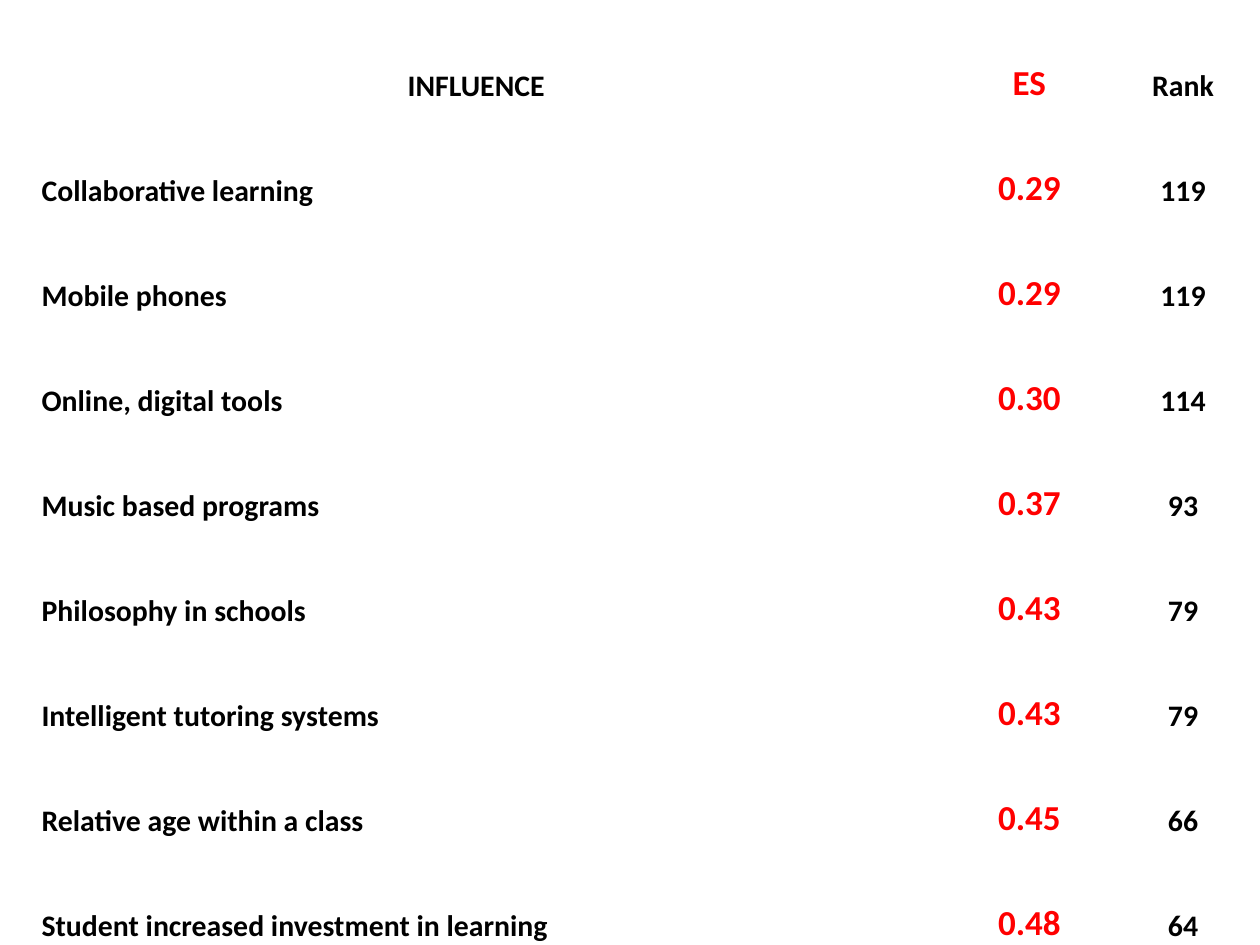
"""Build a slide with a table of learning influences, effect sizes and ranks."""
from dataclasses import dataclass

from lxml.etree import SubElement
from pptx import Presentation
from pptx.dml.color import RGBColor
from pptx.enum.text import MSO_ANCHOR, PP_ALIGN
from pptx.oxml.ns import qn
from pptx.util import Inches, Pt


@dataclass(frozen=True)
class Theme:
    font: str = "Calibri"
    ink: str = "000000"
    accent: str = "FF0000"
    paper: str = "FFFFFF"
    body: int = 17
    score: int = 20
    line: int = 1


theme = Theme()
rows = [
    ("INFLUENCE", "ES", "Rank"),
    ("Collaborative learning", "0.29", "119"),
    ("Mobile phones", "0.29", "119"),
    ("Online, digital tools", "0.30", "114"),
    ("Music based programs", "0.37", "93"),
    ("Philosophy in schools", "0.43", "79"),
    ("Intelligent tutoring systems", "0.43", "79"),
    ("Relative age within a class", "0.45", "66"),
    ("Student increased investment in learning", "0.48", "64"),
]
widths = [7.56, 1.22, 1.22]
styles = [
    (theme.body, theme.ink),
    (theme.score, theme.accent),
    (theme.body, theme.ink),
]


def add_edges(cell):
    props = cell._tc.get_or_add_tcPr()
    for side in ("a:lnL", "a:lnR", "a:lnT", "a:lnB"):
        edge = SubElement(props, qn(side), w=str(Pt(theme.line)))
        fill = SubElement(edge, qn("a:solidFill"))
        SubElement(fill, qn("a:srgbClr"), val=theme.paper)


deck = Presentation()
deck.slide_width, deck.slide_height = Inches(10), Inches(7.5)
slide = deck.slides.add_slide(deck.slide_layouts[6])
frame = slide.shapes.add_table(
    len(rows), len(widths), 0, 0, deck.slide_width, deck.slide_height
)
table = frame.table
for column, width in zip(table.columns, widths):
    column.width = Inches(width)

for r, row in enumerate(rows):
    table.rows[r].height = deck.slide_height // len(rows)
    for c, (text, (size, color)) in enumerate(zip(row, styles)):
        label = r > 0 and c == 0
        cell = table.cell(r, c)
        add_edges(cell)
        cell.fill.solid()
        cell.fill.fore_color.rgb = RGBColor.from_string(theme.paper)
        cell.vertical_anchor = MSO_ANCHOR.BOTTOM
        cell.margin_left = Inches(0.33 if label else 0.01)
        cell.margin_right = cell.margin_top = Inches(0.01)
        cell.margin_bottom = 0
        para = cell.text_frame.paragraphs[0]
        para.alignment = PP_ALIGN.LEFT if label else PP_ALIGN.CENTER
        run = para.add_run()
        run.text = text
        run.font.name = theme.font
        run.font.size = Pt(size)
        run.font.bold = True
        run.font.color.rgb = RGBColor.from_string(color)

deck.save("out.pptx")
